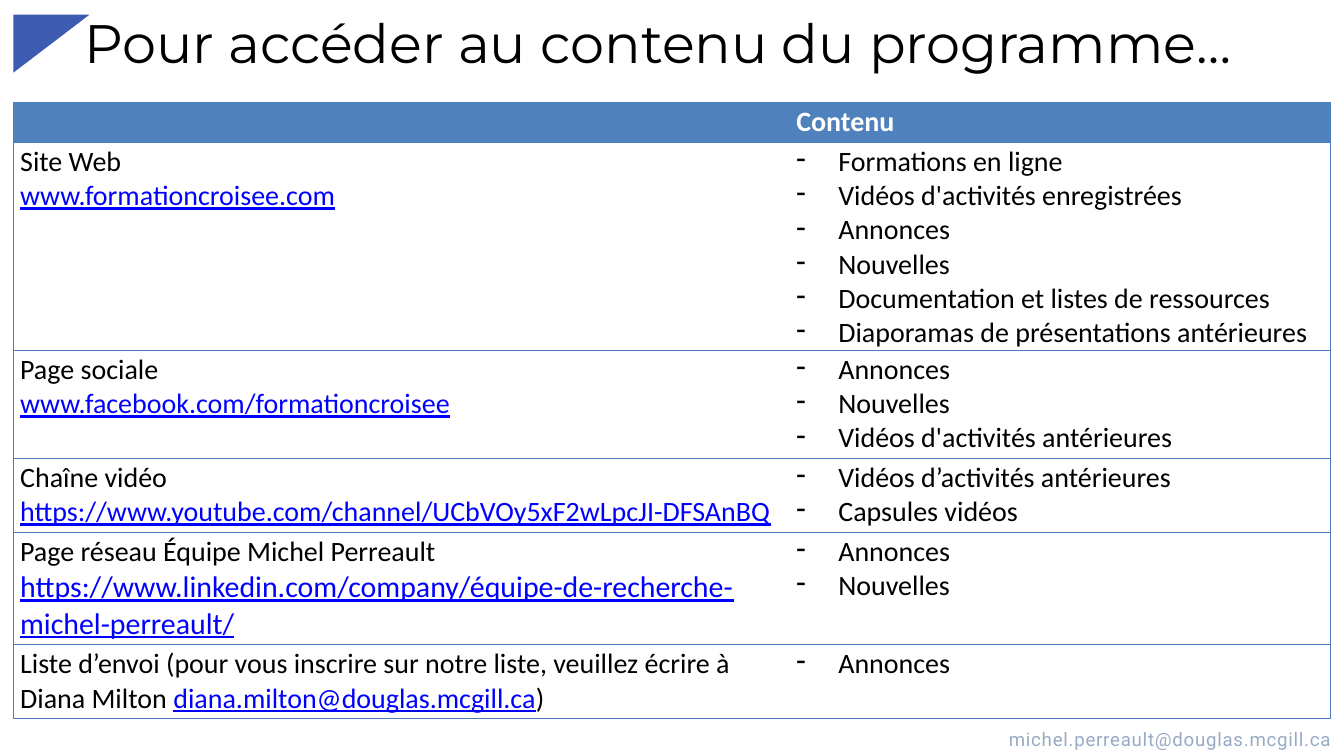
from lxml import etree
from pptx import Presentation
from pptx.dml.color import RGBColor
from pptx.enum import text
from pptx.oxml.ns import qn
from pptx.util import Pt

BLACK, WHITE, LINK = "000000", "FFFFFF", "0000FF"
HEADER, BORDER, ACCENT, CONTACT = "4F81BD", "4B7EBC", "3E5BB2", "99AAC4"
BODY_SIZE = 30
COLUMN_WIDTHS = (831.6, 579.6)
HEADER_HEIGHT = 42.9

# Each channel: row height, paragraphs of (words, is a link, size) runs, contents
CHANNELS = [
    (222.9,
     [[("Site Web", False, 30)], [("www.formationcroisee.com", True, 30)]],
     ["Formations en ligne", "Vidéos d'activités enregistrées", "Annonces",
      "Nouvelles", "Documentation et listes de ressources",
      "Diaporamas de présentations antérieures"]),
    (115.7,
     [[("Page sociale", False, 30)],
      [("www.facebook.com/formationcroisee", True, 30)]],
     ["Annonces", "Nouvelles", "Vidéos d'activités antérieures"]),
    (79.3,
     [[("Chaîne vidéo", False, 30)],
      [("https://www.youtube.com/channel/UCbVOy5xF2wLpcJI-DFSAnBQ", True, 30)]],
     ["Vidéos d’activités antérieures", "Capsules vidéos"]),
    (120,
     [[("Page réseau Équipe Michel Perreault", False, 30)],
      [("https://www.linkedin.com/company/équipe-de-recherche-michel-perreault/",
        True, 32)]],
     ["Annonces", "Nouvelles"]),
    (79.3,
     [[("Liste d’envoi (pour vous inscrire sur notre liste, veuillez écrire à "
        "Diana Milton ", False, 30),
       ("diana.milton@douglas.mcgill.ca", True, 30), (")", False, 30)]],
     ["Annonces"]),
]


def rgb(value):
    return RGBColor.from_string(value)


def add_run(paragraph, words, size, color, font="Calibri", bold=False, underline=False):
    run = paragraph.add_run()
    run.text = words
    run.font.size = Pt(size)
    run.font.name = font
    run.font.bold = bold
    run.font.underline = underline
    run.font.color.rgb = rgb(color)
    return run


def place_line(shape, left, top, width, height, spacing):
    """Position a one-line shape without insets and return its paragraph."""
    shape.left, shape.top, shape.width, shape.height = map(Pt, (left, top, width, height))
    frame = shape.text_frame
    frame.margin_left = frame.margin_right = frame.margin_top = frame.margin_bottom = 0
    frame.word_wrap = True
    frame.auto_size = text.MSO_AUTO_SIZE.NONE
    frame.vertical_anchor = text.MSO_ANCHOR.TOP
    frame.paragraphs[0].line_spacing = Pt(spacing)
    return frame.paragraphs[0]


def add_title(slide):
    line = place_line(slide.shapes.title, 90, 15.8, 1335.6, 64.8, 63.6)
    line.alignment = text.PP_ALIGN.LEFT
    add_run(line, "Pour accéder au contenu du programme…", 58, BLACK, "Montserrat")


def add_corner(slide):
    builder = slide.shapes.build_freeform(Pt(14.4), Pt(15.8))
    builder.add_line_segments([(Pt(95.8), Pt(15.8)), (Pt(14.4), Pt(77.8))])
    corner = builder.convert_to_shape()
    corner.shadow.inherit = False
    corner.fill.solid()
    corner.fill.fore_color.rgb = rgb(ACCENT)
    corner.line.fill.background()


def add_contact(slide):
    box = slide.shapes.add_textbox(0, 0, 0, 0)
    line = place_line(box, 1038.2, 764.6, 388, 35.3, 39.2)
    line.alignment = text.PP_ALIGN.RIGHT
    run = add_run(line, "michel.perreault@douglas.mcgill.ca", 20, CONTACT, "Roboto")
    run.font._element.set("spc", "80")


def set_borders(cell, visible):
    """Draw the sides named in visible (L, R, T, B) and clear the others."""
    properties = cell._tc.get_or_add_tcPr()
    for side in "LRTB":
        line = etree.SubElement(properties, qn("a:ln" + side), w=str(Pt(0.75)))
        if side in visible:
            fill = etree.SubElement(line, qn("a:solidFill"))
            etree.SubElement(fill, qn("a:srgbClr"), val=BORDER)
        else:
            etree.SubElement(line, qn("a:noFill"))


def add_dash(paragraph):
    properties = paragraph._p.get_or_add_pPr()
    properties.set("marL", str(Pt(45)))
    properties.set("indent", str(Pt(-45)))
    etree.SubElement(properties, qn("a:buChar"), char="-")


def cell_paragraphs(cell, count):
    frame = cell.text_frame
    for _ in range(count - 1):
        frame.add_paragraph()
    return frame.paragraphs


def fill_row(row, runs_by_line, contents):
    channel, content = row.cells
    for line, runs in zip(cell_paragraphs(channel, len(runs_by_line)), runs_by_line):
        for words, is_link, size in runs:
            add_run(line, words, size, LINK if is_link else BLACK, underline=is_link)
    for line, words in zip(cell_paragraphs(content, len(contents)), contents):
        add_dash(line)
        add_run(line, words, BODY_SIZE, BLACK)


def add_channel_table(slide):
    heights = [HEADER_HEIGHT] + [height for height, _, _ in CHANNELS]
    table = slide.shapes.add_table(
        len(heights), 2, Pt(14.4), Pt(109.4), Pt(sum(COLUMN_WIDTHS)), Pt(sum(heights))).table
    table.horz_banding = False
    for column, width in zip(table.columns, COLUMN_WIDTHS):
        column.width = Pt(width)
    for index, (row, height) in enumerate(zip(table.rows, heights)):
        row.height = Pt(height)
        for cell, outer_side in zip(row.cells, "LR"):
            cell.margin_top = Pt(3)
            cell.margin_bottom = Pt(0 if index == 1 else 2.5)
            set_borders(cell, outer_side + "TB")
            if index == 0:
                cell.fill.solid()
                cell.fill.fore_color.rgb = rgb(HEADER)
            else:
                cell.fill.background()
    heading = table.cell(0, 1).text_frame.paragraphs[0]
    add_run(heading, "Contenu", BODY_SIZE, WHITE, bold=True)
    for row, (_, runs_by_line, contents) in zip(list(table.rows)[1:], CHANNELS):
        fill_row(row, runs_by_line, contents)


def main():
    deck = Presentation()
    deck.slide_width, deck.slide_height = Pt(1440), Pt(810)
    slide = deck.slides.add_slide(deck.slide_layouts[5])
    add_corner(slide)
    add_title(slide)
    add_contact(slide)
    add_channel_table(slide)
    deck.save("out.pptx")


if __name__ == "__main__":
    main()
